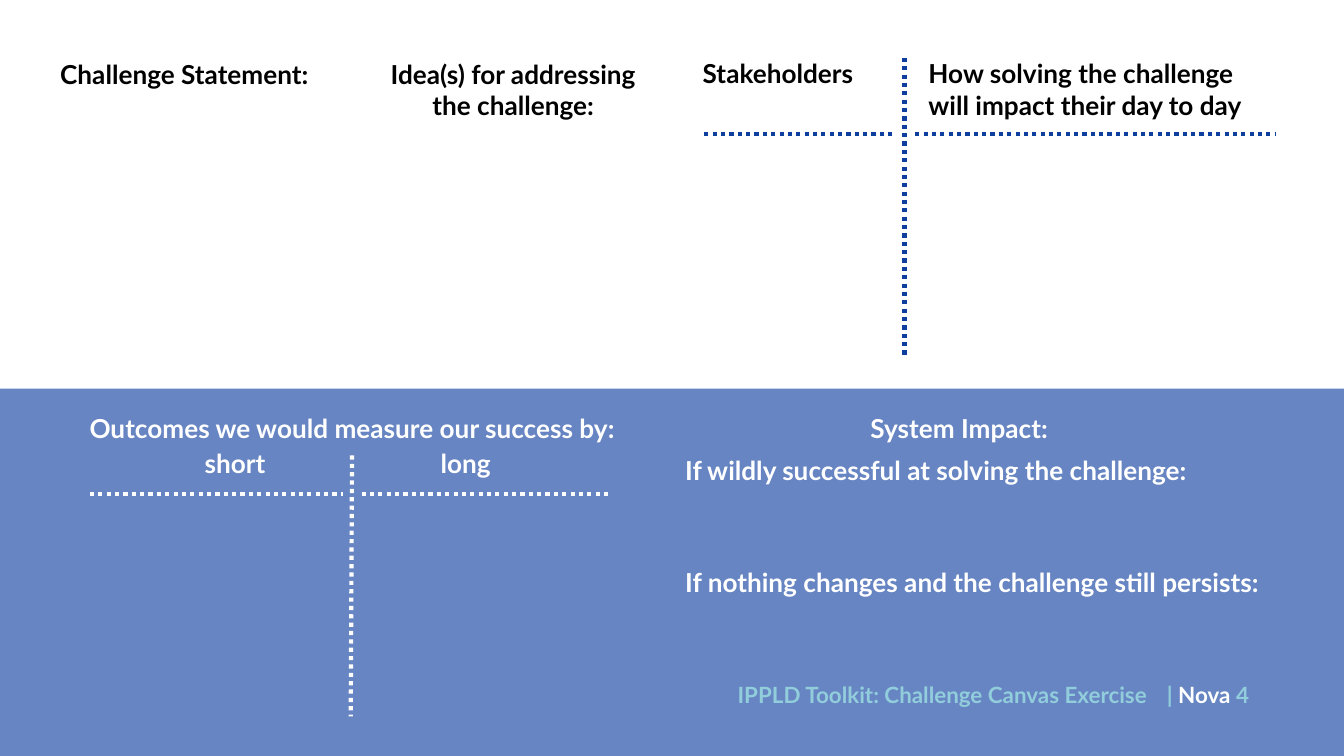
import pptx
import pptx.util
import pptx.dml.color
import pptx.enum.dml
import pptx.enum.shapes
import pptx.enum.text
import pptx.oxml.ns
import lxml.etree

Pt = pptx.util.Pt
qn = pptx.oxml.ns.qn
LEFT = pptx.enum.text.PP_ALIGN.LEFT
CENTER = pptx.enum.text.PP_ALIGN.CENTER

BLUE = pptx.dml.color.RGBColor(0x0E, 0x3F, 0x9F)
BLACK = pptx.dml.color.RGBColor(0, 0, 0)
WHITE = pptx.dml.color.RGBColor(0xFF, 0xFF, 0xFF)
AQUA = pptx.dml.color.RGBColor(0x92, 0xCD, 0xDC)

deck = pptx.Presentation()
deck.slide_width, deck.slide_height = Pt(720), Pt(405)
canvas = deck.slides.add_slide(deck.slide_layouts[6])

lower_band = canvas.shapes.add_shape(
    pptx.enum.shapes.MSO_SHAPE.RECTANGLE, Pt(0), Pt(208.2), Pt(720), Pt(196.8))
lower_band.shadow.inherit = False
lower_band.line.fill.background()
lower_band.fill.solid()
lower_band.fill.fore_color.rgb = BLUE
band_color = lower_band.fill._xPr.find(".//" + qn("a:srgbClr"))
lxml.etree.SubElement(band_color, qn("a:alpha"), val="63000")


def add_text(lines, left, top, width, height, color, align=LEFT, size=14, inset=7.2):
    box = canvas.shapes.add_textbox(Pt(left), Pt(top), Pt(width), Pt(height))
    frame = box.text_frame
    frame.word_wrap = True
    frame.margin_left = frame.margin_right = Pt(7.2)
    frame.margin_top = frame.margin_bottom = Pt(inset)
    frame.text = "\n".join(lines)
    for paragraph in frame.paragraphs:
        paragraph.alignment = align
        paragraph.font.name = "Lato"
        paragraph.font.size = Pt(size)
        paragraph.font.bold = True
        paragraph.font.color.rgb = color
    return frame


HEADER_TOP, OUTCOME_TOP, TERM_TOP = 23.8, 213.8, 232.6
for heading, left, top, width, height, color, align in [
    ("Challenge Statement:", 25.2, HEADER_TOP, 164, 32, BLACK, LEFT),
    ("Stakeholders", 369.4, HEADER_TOP, 105, 30, BLACK, LEFT),
    ("Idea(s) for addressing the challenge:", 195.8, HEADER_TOP, 158.4, 54, BLACK, CENTER),
    ("How solving the challenge will impact their day to day",
     490.3, HEADER_TOP, 193, 48, BLACK, LEFT),
    ("Outcomes we would measure our success by:",
     31, OUTCOME_TOP, 315.4, 30, WHITE, CENTER),
    ("short", 63.6, TERM_TOP, 124.6, 30, WHITE, CENTER),
    ("long", 190, TERM_TOP, 119, 30, WHITE, CENTER),
    ("System Impact:", 386.4, OUTCOME_TOP, 255, 28, WHITE, CENTER),
]:
    add_text([heading], left, top, width, height, color, align)

system_impact = add_text(
    ["If wildly successful at solving the challenge:",
     "If nothing changes and the challenge still persists:"],
    360, 236.5, 348.5, 96.5, WHITE)
system_impact.paragraphs[1].space_before = Pt(43.2)

footer = add_text([""], 388.1, 361.4, 316, 25, AQUA, size=12, inset=3.6).paragraphs[0]
for words, color in [("IPPLD Toolkit: Challenge Canvas Exercise\t| ", AQUA),
                     ("Nova ", WHITE), ("4", AQUA)]:
    run = footer.add_run()
    run.text = words
    run.font.color.rgb = color
tab_stops = lxml.etree.Element(qn("a:tabLst"))
lxml.etree.SubElement(tab_stops, qn("a:tab"), pos=str(Pt(230)), algn="l")
footer._p.pPr.insert(0, tab_stops)

for x1, y1, x2, y2, color in [
    (484.6, 31, 484.6, 191.5, BLUE),
    (490.3, 72, 683.3, 72, BLUE),
    (377.3, 72, 480.2, 72, BLUE),
    (188.6, 244, 187.9, 383.8, WHITE),
    (193.7, 264.8, 326.2, 264.8, WHITE),
    (48.2, 264.8, 183.6, 264.8, WHITE),
]:
    divider = canvas.shapes.add_connector(
        pptx.enum.shapes.MSO_CONNECTOR.STRAIGHT, Pt(x1), Pt(y1), Pt(x2), Pt(y2))
    divider.line.color.rgb = color
    divider.line.width = Pt(2.25)
    divider.line.dash_style = pptx.enum.dml.MSO_LINE.ROUND_DOT
    lxml.etree.SubElement(divider._element.spPr, qn("a:effectLst"))

deck.save("out.pptx")
